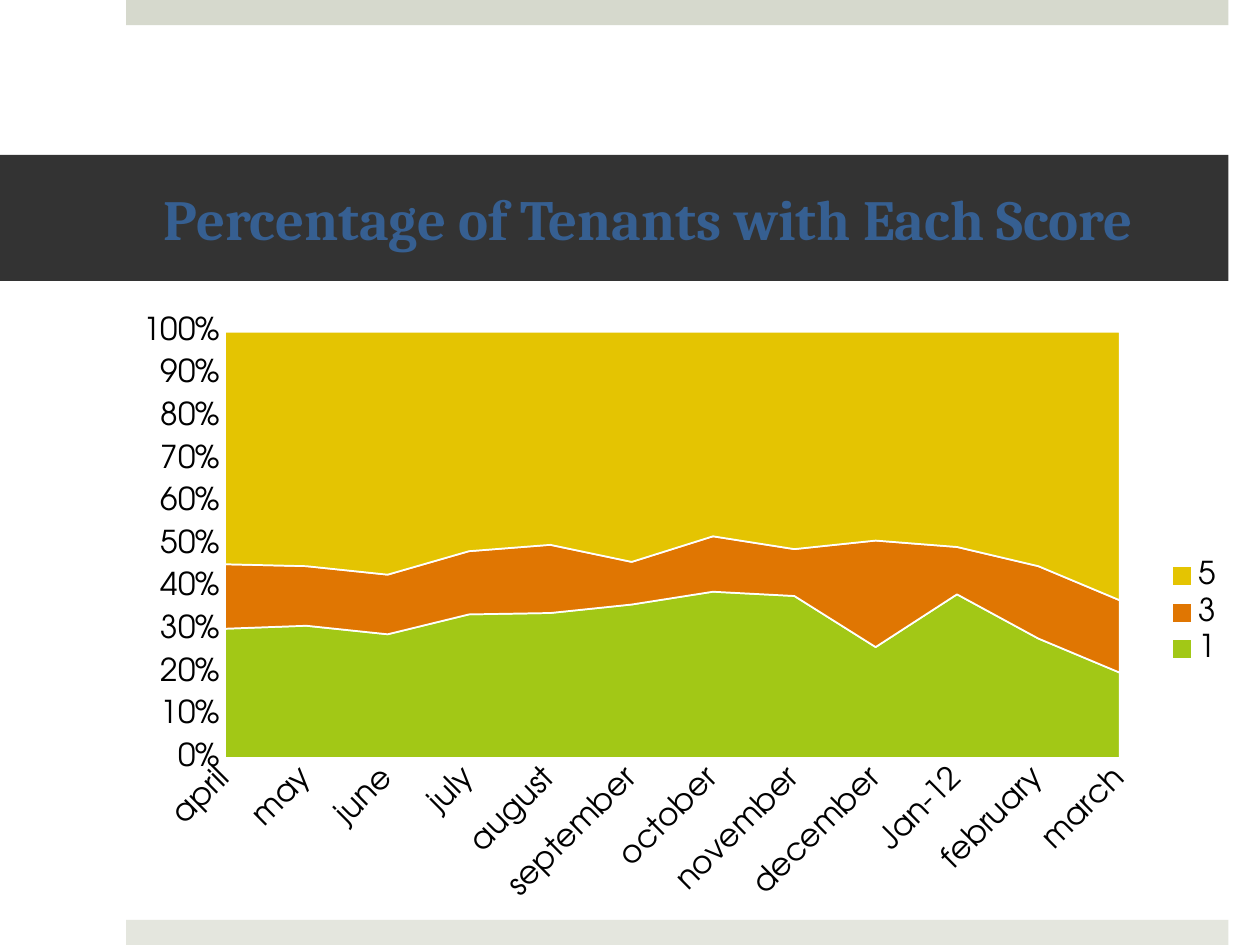
from typing import NamedTuple

from lxml import etree
from pptx import Presentation
from pptx.chart.data import CategoryChartData
from pptx.dml.color import RGBColor
from pptx.enum.chart import XL_CHART_TYPE, XL_LEGEND_POSITION, XL_TICK_MARK
from pptx.enum.shapes import MSO_SHAPE
from pptx.enum.text import MSO_ANCHOR, MSO_AUTO_SIZE, PP_ALIGN
from pptx.oxml.ns import qn
from pptx.util import Inches, Pt

AREA = XL_CHART_TYPE.AREA_STACKED_100
LEGEND_RIGHT = XL_LEGEND_POSITION.RIGHT
NO_TICK = XL_TICK_MARK.NONE
RECTANGLE = MSO_SHAPE.RECTANGLE

WHITE = RGBColor(0xFF, 0xFF, 0xFF)
BLACK = RGBColor(0x00, 0x00, 0x00)
CHARCOAL = RGBColor(0x33, 0x33, 0x33)
BLUE = RGBColor(0x36, 0x5F, 0x91)
SAGE = RGBColor(0xD6, 0xD9, 0xCD)
PALE_SAGE = RGBColor(0xE4, 0xE6, 0xDE)
GREEN = RGBColor(0xA2, 0xC8, 0x16)
ORANGE = RGBColor(0xE0, 0x76, 0x02)
YELLOW = RGBColor(0xE4, 0xC4, 0x02)


class Band(NamedTuple):
    top: float
    color: RGBColor


class Score(NamedTuple):
    name: str
    percentages: tuple[int, ...]
    color: RGBColor


BANDS = (Band(0, SAGE), Band(7.3, PALE_SAGE))
MONTHS = ("april", "may", "june", "july", "august", "september", "october",
          "november", "december", "Jan-12", "february", "march")
SCORES = (
    Score("1", (30, 31, 29, 34, 34, 36, 39, 38, 26, 38, 28, 20), GREEN),
    Score("3", (15, 14, 14, 15, 16, 10, 13, 11, 25, 11, 17, 17), ORANGE),
    Score("5", (54, 55, 57, 52, 50, 54, 48, 51, 49, 50, 55, 63), YELLOW),
)


def add_band(page, band: Band) -> None:
    shape = page.shapes.add_shape(
        RECTANGLE, Inches(1), Inches(band.top), Inches(8.75), Inches(0.2))
    shape.shadow.inherit = False
    shape.fill.solid()
    shape.fill.fore_color.rgb = band.color
    shape.line.fill.background()


def format_title(title, text: str) -> None:
    title.left, title.top = Inches(0), Inches(1.23)
    title.width, title.height = Inches(9.75), Inches(1)
    title.fill.solid()
    title.fill.fore_color.rgb = CHARCOAL
    frame = title.text_frame
    frame.text = text
    frame.word_wrap = True
    frame.auto_size = MSO_AUTO_SIZE.NONE
    frame.vertical_anchor = MSO_ANCHOR.MIDDLE
    frame.margin_left, frame.margin_right = Inches(1.3), Inches(0.3)
    frame.margin_top = frame.margin_bottom = Inches(0.05)
    para = frame.paragraphs[0]
    para.alignment = PP_ALIGN.LEFT
    para.font.name = "Cambria"
    para.font.size = Pt(32.4)
    para.font.bold = True
    para.font.color.rgb = BLUE


def place_part(part, index: int, **fractions: float) -> None:
    """Give a chart part a manual layout in fractions of the chart."""
    for old in part.findall(qn("c:layout")):
        part.remove(old)
    layout = etree.Element(qn("c:layout"))
    part.insert(index, layout)
    manual = etree.SubElement(layout, qn("c:manualLayout"))
    settings = {"xMode": "edge", "yMode": "edge", **fractions}
    if "w" in fractions:
        settings = {"layoutTarget": "inner", **settings}
    for name, value in settings.items():
        etree.SubElement(manual, qn(f"c:{name}")).set("val", str(value))


def add_score_chart(page) -> None:
    chart_data = CategoryChartData()
    chart_data.categories = MONTHS
    for score in SCORES:
        chart_data.add_series(score.name, score.percentages)
    chart = page.shapes.add_chart(
        AREA, Inches(0.95), Inches(2.41), Inches(8.8), Inches(4.86),
        chart_data).chart
    chart.has_title = False
    chart.font.name = "TeX Gyre Adventor"
    chart.font.size = Pt(18)
    chart.font.color.rgb = BLACK

    # Areas with thin white edges
    for series, score in zip(chart.plots[0].series, SCORES):
        series.format.fill.solid()
        series.format.fill.fore_color.rgb = score.color
        series.format.line.color.rgb = WHITE
        series.format.line.width = Pt(1)

    # Axes
    for axis in (chart.category_axis, chart.value_axis):
        axis.major_tick_mark = axis.minor_tick_mark = NO_TICK
        axis.format.line.fill.background()
    months, percent = chart.category_axis, chart.value_axis
    months.tick_labels.font.size = Pt(18)
    months._element.find(qn("c:txPr")).find(qn("a:bodyPr")).set("rot", "-2700000")
    percent.has_major_gridlines = True
    percent.major_gridlines.format.line.color.rgb = SAGE
    percent.minimum_scale, percent.maximum_scale = 0, 1
    percent.major_unit = 0.1
    percent.tick_labels.number_format = "0%"
    percent.tick_labels.number_format_is_linked = False

    # Legend and plot positions
    chart.has_legend = True
    chart.legend.position = LEGEND_RIGHT
    chart.legend.include_in_layout = False
    place_part(chart.legend._element, 1, x=0.94, y=0.41)
    plot_area = chart._chartSpace.chart.plotArea
    place_part(plot_area, 0, x=0.095, y=0.046, w=0.807, h=0.696)


def main() -> None:
    deck = Presentation()
    deck.slide_width, deck.slide_height = Inches(10), Inches(7.5)
    page = deck.slides.add_slide(deck.slide_layouts.get_by_name("Title Only"))
    for band in BANDS:
        add_band(page, band)
    format_title(page.shapes.title, "Percentage of Tenants with Each Score")
    add_score_chart(page)
    deck.save("out.pptx")


if __name__ == "__main__":
    main()
